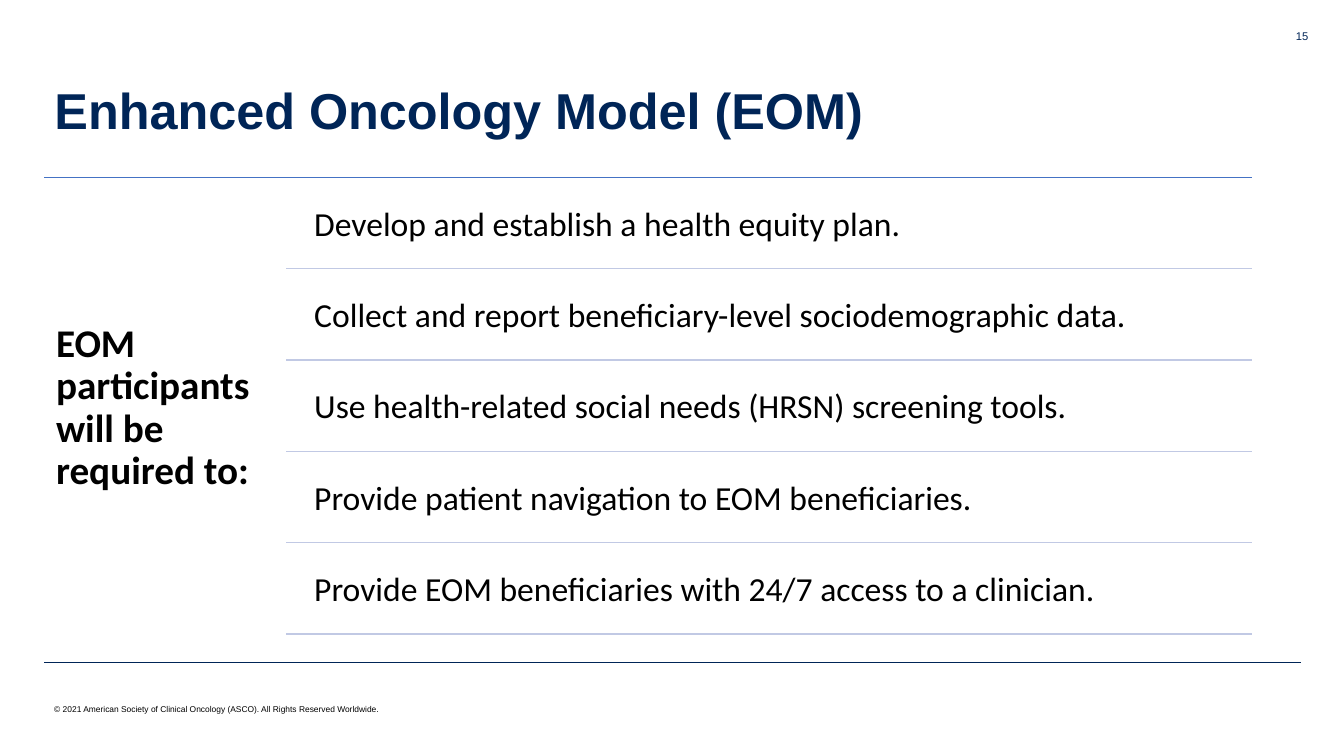
"""Build the Enhanced Oncology Model slide."""
from lxml import etree
from pptx import Presentation
from pptx.dml.color import RGBColor
from pptx.enum.shapes import MSO_CONNECTOR
from pptx.enum.text import MSO_ANCHOR, MSO_AUTO_SIZE, PP_ALIGN
from pptx.oxml.ns import qn
from pptx.util import Pt

LINE = MSO_CONNECTOR.STRAIGHT
MID, TOP = MSO_ANCHOR.MIDDLE, MSO_ANCHOR.TOP
LEFT, RIGHT = PP_ALIGN.LEFT, PP_ALIGN.RIGHT
FIXED = MSO_AUTO_SIZE.NONE

NAVY, BLUE, PALE, BLACK = "002557", "4472C4", "C1C9E4", "000000"
EDGE, END = 31.7, 894.2
HEAD, STEP = 126.6, 65.25
ITEMS = [
    "Develop and establish a health equity plan.",
    "Collect and report beneficiary-level sociodemographic data.",
    "Use health-related social needs (HRSN) screening tools.",
    "Provide patient navigation to EOM beneficiaries.",
    "Provide EOM beneficiaries with 24/7 access to a clinician.",
]


def color(code):
    return RGBColor.from_string(code)


def write(frame, text, *, size, font="Arial", ink=BLACK, bold=False,
          align=LEFT, anchor=MID, space=1.0, pad=None):
    frame.word_wrap = True
    frame.auto_size = FIXED
    frame.vertical_anchor = anchor
    if pad is not None:
        frame.margin_left = frame.margin_right = Pt(pad)
        frame.margin_top = frame.margin_bottom = Pt(pad)
    para = frame.paragraphs[0]
    para.alignment = align
    para.line_spacing = space
    run = para.add_run()
    run.text = text
    run.font.name = font
    run.font.size = Pt(size)
    run.font.bold = bold
    run.font.color.rgb = color(ink)


class Page:
    def __init__(self, slide):
        self.slide = slide

    def title(self, text, x, y, w, h, **style):
        shape = self.slide.shapes.title
        shape.left, shape.top = Pt(x), Pt(y)
        shape.width, shape.height = Pt(w), Pt(h)
        write(shape.text_frame, text, **style)

    def text(self, text, x, y, w, h, **style):
        box = self.slide.shapes.add_textbox(Pt(x), Pt(y), Pt(w), Pt(h))
        write(box.text_frame, text, **style)

    def rule(self, x, y, end, ink, width=1):
        line = self.slide.shapes.add_connector(
            LINE, Pt(x), Pt(y), Pt(end), Pt(y))
        line.line.color.rgb = color(ink)
        line.line.width = Pt(width)
        props = line.element.find(qn("p:spPr"))
        etree.SubElement(props, qn("a:effectLst"))


def main():
    deck = Presentation()
    deck.slide_width, deck.slide_height = Pt(960), Pt(540)
    page = Page(deck.slides.add_slide(deck.slide_layouts[5]))

    page.rule(EDGE, 473, 929.5, NAVY, 0.25)
    page.title("Enhanced Oncology Model (EOM)", EDGE, 28.8, 862.5, 104.4,
               size=36, ink=NAVY, bold=True, space=0.9)

    page.rule(EDGE, HEAD, END, BLUE)
    page.text("EOM participants will be required to:", EDGE, HEAD, 172.8, 330,
              size=28, font="Calibri", bold=True, space=0.9, pad=8.4)
    for row, item in enumerate(ITEMS):
        top = HEAD + 3.2 + row * STEP
        page.text(item, 217.4, top, 676.8, 62,
                  size=24, font="Calibri", space=0.9, pad=7.2)
        page.rule(204.5, top + 62, END, PALE)

    page.text("© 2021 American Society of Clinical Oncology (ASCO). "
              "All Rights Reserved Worldwide.",
              EDGE, 492.5, 324, 28.8, size=6)
    page.text("15", 874, 17.3, 67.7, 28.8,
              size=8, ink=NAVY, align=RIGHT, anchor=TOP)
    deck.save("out.pptx")


if __name__ == "__main__":
    main()
